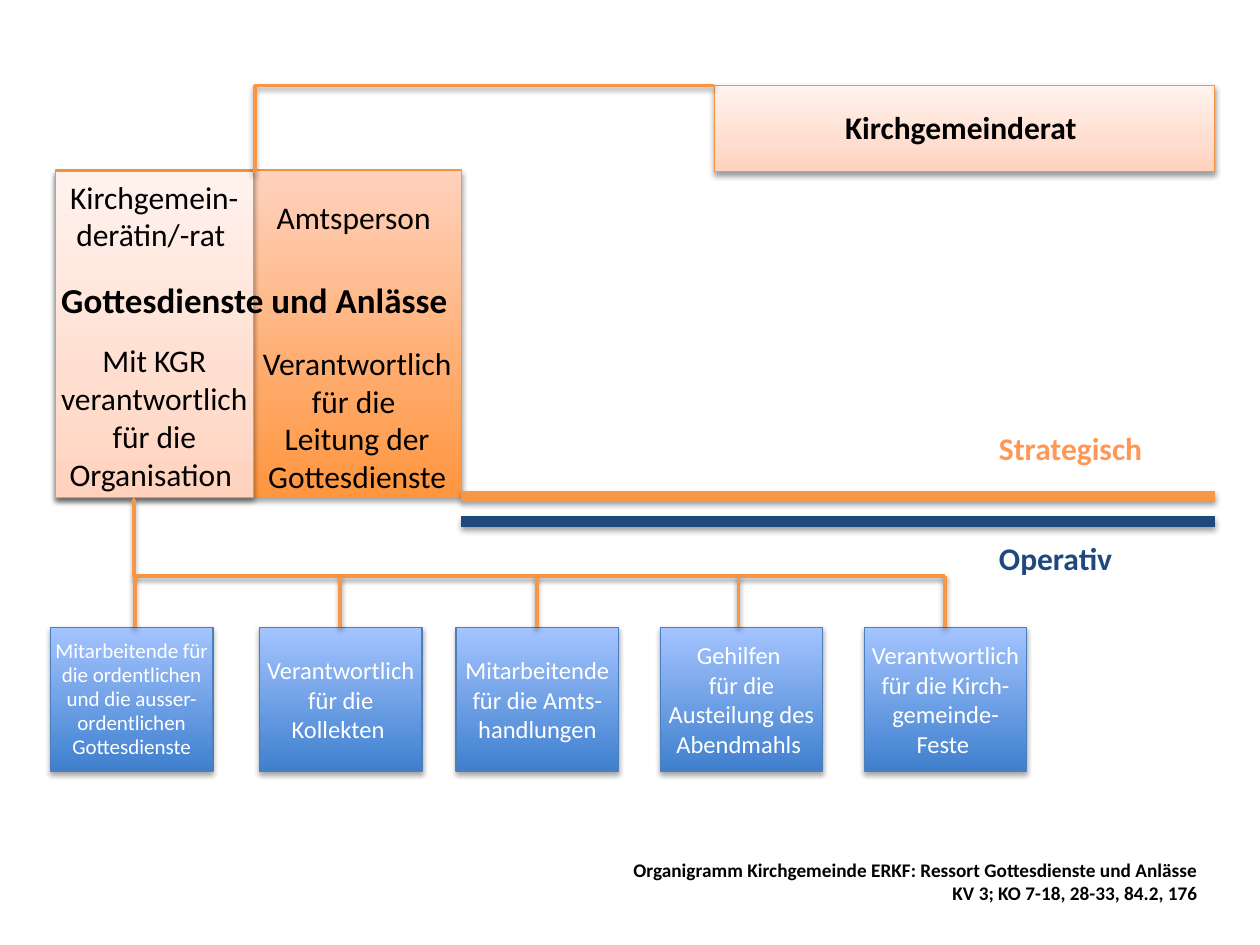
from lxml.etree import SubElement
from pptx import Presentation
from pptx.dml.color import RGBColor
from pptx.enum.shapes import MSO_CONNECTOR, MSO_SHAPE
from pptx.enum.text import MSO_ANCHOR, MSO_AUTO_SIZE, PP_ALIGN
from pptx.oxml.ns import qn
from pptx.util import Inches, Pt

THEME = {
    "font": "Calibri",
    "black": "000000", "white": "FFFFFF", "orange": "F79646",
    "navy": "1F497D", "strategic": "FF9856",
    "title": 20, "body": 18, "staff": 14, "small": 12, "footer": 11,
    "branch": 2, "divider": 6,
}
STYLES = {
    "strong": {"stops": [(0, "FF953E"), (100, "FFD2BD")], "line": "F69240", "shadow": (35, 1.8)},
    "pale": {"stops": [(0, "FFD2BD"), (35, "FFDED0"), (100, "FFF2ED")], "line": "F69240", "shadow": (38, 1.6)},
    "blue": {"stops": [(0, "3F80CE"), (100, "A4C4FF")], "line": "4B7EBC", "shadow": (35, 1.8)},
}
LEFT, CENTER, RIGHT = PP_ALIGN.LEFT, PP_ALIGN.CENTER, PP_ALIGN.RIGHT
NARROW, NORMAL = 0.02, 0.1

PANELS = [
    (MSO_SHAPE.FLOWCHART_PROCESS, (0.44, 1.35, 3.22, 2.6), "strong"),
    (MSO_SHAPE.FLOWCHART_PROCESS, (0.44, 1.36, 1.57, 2.59), "pale"),
    (MSO_SHAPE.RECTANGLE, (5.67, 0.68, 3.97, 0.68), "pale"),
]
TITLE = ("Gottesdienste und Anlässe ", (0.44, 2.16, 3.22, 0.44))
LABELS = [
    ("Verantwortlich für die \vLeitung der Gottesdienste", (2.01, 2.68, 1.65, 1.31), "body", "black", False, CENTER, NARROW),
    ("Amtsperson ", (2.01, 1.52, 1.65, 0.4), "body", "black", False, CENTER, NORMAL),
    ("Kirchgemein-derätin/-rat ", (0.44, 1.36, 1.57, 0.71), "body", "black", False, CENTER, NORMAL),
    ("Mit KGR verantwortlich für die Organisation ", (0.44, 2.66, 1.57, 1.31), "body", "black", False, CENTER, NARROW),
    ("Strategisch", (7.83, 3.36, 1.62, 0.4), "body", "strategic", True, LEFT, NORMAL),
    ("Operativ", (7.83, 4.23, 1.68, 0.4), "body", "navy", True, LEFT, NORMAL),
    ("Kirchgemeinderat ", (5.67, 0.81, 3.97, 0.4), "body", "black", True, CENTER, NORMAL),
    ("Organigramm Kirchgemeinde ERKF: Ressort Gottesdienste und Anlässe \nKV 3; KO 7-18, 28-33, 84.2, 176 ",
     (4.67, 6.76, 4.97, 0.47), "footer", "black", True, RIGHT, NORMAL),
]
STAFF = [
    (0.4, 1.07, "Mitarbeitende für die ordentlichen und die ausser-ordentlichen Gottesdienste", "small", 0.95),
    (2.06, 2.7, "Verantwortlich für die Kollekten ", "staff", None),
    (3.62, 4.26, "Mitarbeitende für die Amts-handlungen", "staff", None),
    (5.24, 5.86, "Gehilfen \vfür die Austeilung des Abendmahls ", "staff", None),
    (6.86, 7.5, "Verantwortlich für die Kirch-gemeinde-\vFeste ", "staff", None),
]
STAFF_TOP, STAFF_WIDTH, STAFF_HEIGHT = 4.98, 1.29, 1.14
BRANCH_TOP, BRANCH_Y = 3.97, 4.57
ELBOWS = [
    ((STAFF[0][1], BRANCH_TOP), (STAFF[-1][1], BRANCH_Y), -100),
    ((5.67, 0.68), (2.01, 1.36), 99600),
]
DIVIDERS = [(3.94, "orange"), (4.14, "navy")]
DIVIDER_LEFT, DIVIDER_RIGHT = 3.66, 9.64


def inches(values):
    return [Inches(value) for value in values]


def add_shadow(properties, opacity, distance):
    effects = properties.find(qn("a:effectLst"))
    if effects is None:
        effects = SubElement(properties, qn("a:effectLst"))
    shadow = SubElement(effects, qn("a:outerShdw"), blurRad=str(Pt(3.1)),
                        dist=str(Pt(distance)), dir="5400000", rotWithShape="0")
    color = SubElement(shadow, qn("a:srgbClr"), val=THEME["black"])
    SubElement(color, qn("a:alpha"), val=str(opacity * 1000))


def add_box(page, kind, place, style_name):
    style = STYLES[style_name]
    box = page.shapes.add_shape(kind, *inches(place))
    box.fill.gradient()
    box.fill.gradient_angle = 90
    stops = box._element.spPr.find(qn("a:gradFill")).find(qn("a:gsLst"))
    for stop in list(stops):
        stops.remove(stop)
    for position, color in style["stops"]:
        stop = SubElement(stops, qn("a:gs"), pos=str(position * 1000))
        SubElement(stop, qn("a:srgbClr"), val=color)
    box.line.color.rgb = RGBColor.from_string(style["line"])
    box.line.width = Pt(0.75)
    box.shadow.inherit = False
    add_shadow(box._element.spPr, *style["shadow"])
    return box


def write(box, text, size, color, bold, align, inset, anchor=MSO_ANCHOR.TOP, spacing=None):
    frame = box.text_frame
    frame.text = text
    frame.word_wrap = True
    frame.auto_size = MSO_AUTO_SIZE.NONE
    frame.vertical_anchor = anchor
    frame.margin_left = frame.margin_right = Inches(inset)
    frame.margin_top = frame.margin_bottom = Inches(0.05)
    for para in frame.paragraphs:
        para.alignment = align
        if spacing:
            para.line_spacing = spacing
        for span in para.runs:
            span.font.name = THEME["font"]
            span.font.size = Pt(THEME[size])
            span.font.bold = bold
            span.font.color.rgb = RGBColor.from_string(THEME[color])


def add_line(page, start, end, color="orange", width="branch", bend=None):
    kind = MSO_CONNECTOR.STRAIGHT if bend is None else MSO_CONNECTOR.ELBOW
    line = page.shapes.add_connector(kind, *inches(start + end))
    line.line.color.rgb = RGBColor.from_string(THEME[color])
    line.line.width = Pt(THEME[width])
    properties = line._element.spPr
    if bend is not None:
        adjustments = properties.find(qn("a:prstGeom")).find(qn("a:avLst"))
        SubElement(adjustments, qn("a:gd"), name="adj1", fmla=f"val {bend}")
    add_shadow(properties, 38, 1.6)


def main():
    deck = Presentation()
    deck.slide_width, deck.slide_height = inches((10, 7.5))
    page = deck.slides.add_slide(deck.slide_layouts[5])

    for kind, place, style in PANELS:
        add_box(page, kind, place, style)

    title = page.shapes.title
    text, place = TITLE
    title.left, title.top, title.width, title.height = inches(place)
    write(title, text, "title", "black", True, CENTER, NARROW)
    page.shapes._spTree.append(title._element)

    for text, place, *look in LABELS:
        write(page.shapes.add_textbox(*inches(place)), text, *look)

    for left, _, text, size, spacing in STAFF:
        place = (left, STAFF_TOP, STAFF_WIDTH, STAFF_HEIGHT)
        box = add_box(page, MSO_SHAPE.RECTANGLE, place, "blue")
        write(box, text, size, "white", False, CENTER, NARROW, MSO_ANCHOR.MIDDLE, spacing)

    for start, end, bend in ELBOWS:
        add_line(page, start, end, bend=bend)
    for _, drop, *_ in STAFF:
        add_line(page, (drop, BRANCH_Y), (drop, STAFF_TOP))
    for y, color in DIVIDERS:
        add_line(page, (DIVIDER_LEFT, y), (DIVIDER_RIGHT, y), color, "divider")

    deck.save("out.pptx")


if __name__ == "__main__":
    main()
